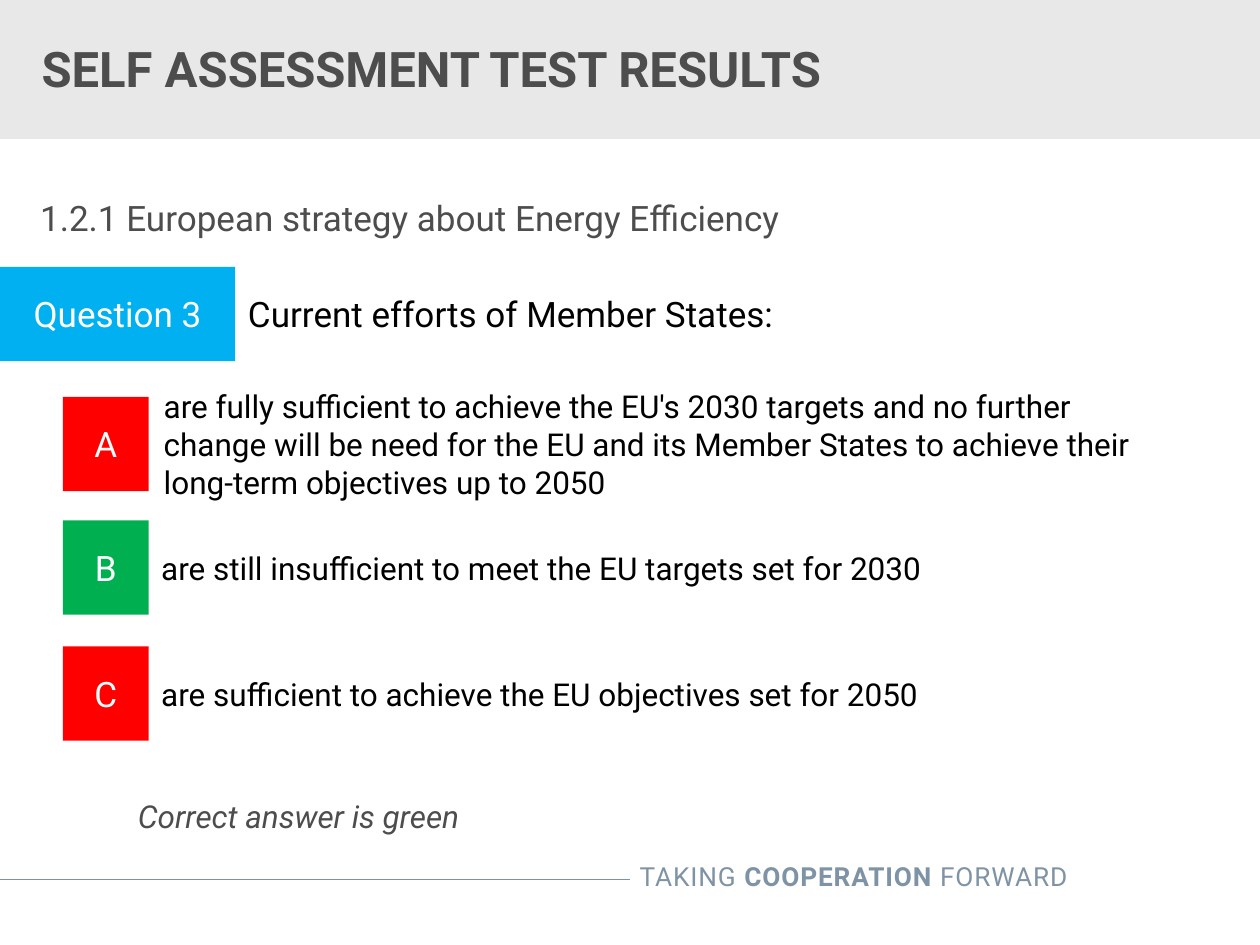
import dataclasses
import pptx
import pptx.dml.color
import pptx.enum.shapes
import pptx.enum.text
import pptx.oxml
import pptx.util

Cm = pptx.util.Cm
ALIGN = pptx.enum.text.PP_ALIGN
ANCHOR = pptx.enum.text.MSO_ANCHOR


@dataclasses.dataclass(frozen=True)
class Theme:
    font: str = "Roboto"
    band: str = "E8E8E8"
    heading: str = "4D4D4E"
    footer: str = "7E93A5"
    question: str = "00B0F0"
    wrong: str = "FF0000"
    correct: str = "00B050"
    light: str = "FFFFFF"
    dark: str = "000000"
    title_size: int = 28
    large_size: int = 20
    answer_size: int = 18
    footer_size: int = 15


class SlideBuilder:
    def __init__(self, slide, theme):
        self.slide = slide
        self.theme = theme

    def color(self, value):
        return pptx.dml.color.RGBColor.from_string(value)

    def set_text(self, shape, spans, size, color, align=ALIGN.LEFT, bold=None, italic=None):
        para = shape.text_frame.paragraphs[0]
        para.alignment = align
        for text in spans:
            para.add_run().text = text
        para.font.name = self.theme.font
        para.font.size = pptx.util.Pt(size)
        para.font.color.rgb = self.color(color)
        para.font.bold = bold
        para.font.italic = italic
        return para

    def block(self, left, top, width, height, fill, text=None):
        shape = self.slide.shapes.add_shape(
            pptx.enum.shapes.MSO_SHAPE.RECTANGLE, Cm(left), Cm(top), Cm(width), Cm(height))
        shape.shadow.inherit = False
        shape.fill.solid()
        shape.fill.fore_color.rgb = self.color(fill)
        shape.line.fill.background()
        if text:
            shape.text_frame.vertical_anchor = ANCHOR.MIDDLE
            self.set_text(shape, [text], self.theme.large_size, self.theme.light, ALIGN.CENTER)

    def text(self, left, top, width, height, spans, size, color,
             anchor=ANCHOR.MIDDLE, inset=0.25, **style):
        box = self.slide.shapes.add_textbox(Cm(left), Cm(top), Cm(width), Cm(height))
        frame = box.text_frame
        frame.word_wrap = True
        frame.vertical_anchor = anchor
        frame.margin_left = Cm(inset)
        return self.set_text(box, spans, size, color, **style)

    def rule(self, left, right, y, color):
        line = self.slide.shapes.add_connector(
            pptx.enum.shapes.MSO_CONNECTOR.STRAIGHT, Cm(left), Cm(y), Cm(right), Cm(y))
        line.line.color.rgb = self.color(color)
        line.line.width = pptx.util.Pt(0.75)
        properties = line._element.spPr
        properties.append(pptx.oxml.parse_xml(
            '<a:effectLst xmlns:a="http://schemas.openxmlformats.org/drawingml/2006/main"/>'))

    def footer(self):
        theme = self.theme
        self.rule(0, 12.7, 17.73, theme.footer)
        para = self.text(9.86, 17.22, 11.91, 0.89, ["TAKING ", "COOPERATION", " FORWARD"],
                         theme.footer_size, theme.footer, anchor=ANCHOR.TOP, align=ALIGN.RIGHT)
        para.runs[1].font.bold = True
        for span in para.runs:
            span.font._element.set("spc", "50")

    def answer(self, letter, text, fill, top, text_left):
        self.block(1.27, top, 1.73, 1.9, fill, letter)
        self.text(text_left, top, 20.7, 1.9, [text], self.theme.answer_size, self.theme.dark)


def main():
    theme = Theme()
    deck = pptx.Presentation()
    deck.slide_width, deck.slide_height = Cm(25.4), Cm(19.05)
    page = SlideBuilder(deck.slides.add_slide(deck.slide_layouts[6]), theme)

    page.footer()
    page.block(0, 0, 25.4, 2.8, theme.band)
    page.text(0, 0.41, 18.3, 1.9, ["SELF ASSESSMENT TEST RESULTS"],
              theme.title_size, theme.heading, inset=0.84, bold=True)
    page.text(0.81, 3.9, 23.77, 0.95, ["1.2.1 European strategy about Energy Efficiency"],
              theme.large_size, theme.heading, inset=0)

    page.block(0, 5.38, 4.74, 1.9, theme.question, "Question 3")
    page.text(4.75, 5.38, 20.6, 1.9, ["Current efforts of Member States:"],
              theme.large_size, theme.dark)

    answers = [
        ("A", "are fully sufficient to achieve the EU's 2030 targets and no further change will be "
              "need for the EU and its Member States to achieve their long-term objectives up to 2050",
         theme.wrong, 8, 3.05),
        ("B", "are still insufficient to meet the EU targets set for 2030", theme.correct, 10.49, 3),
        ("C", "are sufficient to achieve the EU objectives set for 2050", theme.wrong, 13.03, 3),
    ]
    for answer in answers:
        page.answer(*answer)

    page.text(2.78, 15.95, 12, 1, ["Correct answer is green"],
              theme.answer_size, theme.heading, inset=0, italic=True)
    deck.save("out.pptx")


if __name__ == "__main__":
    main()
